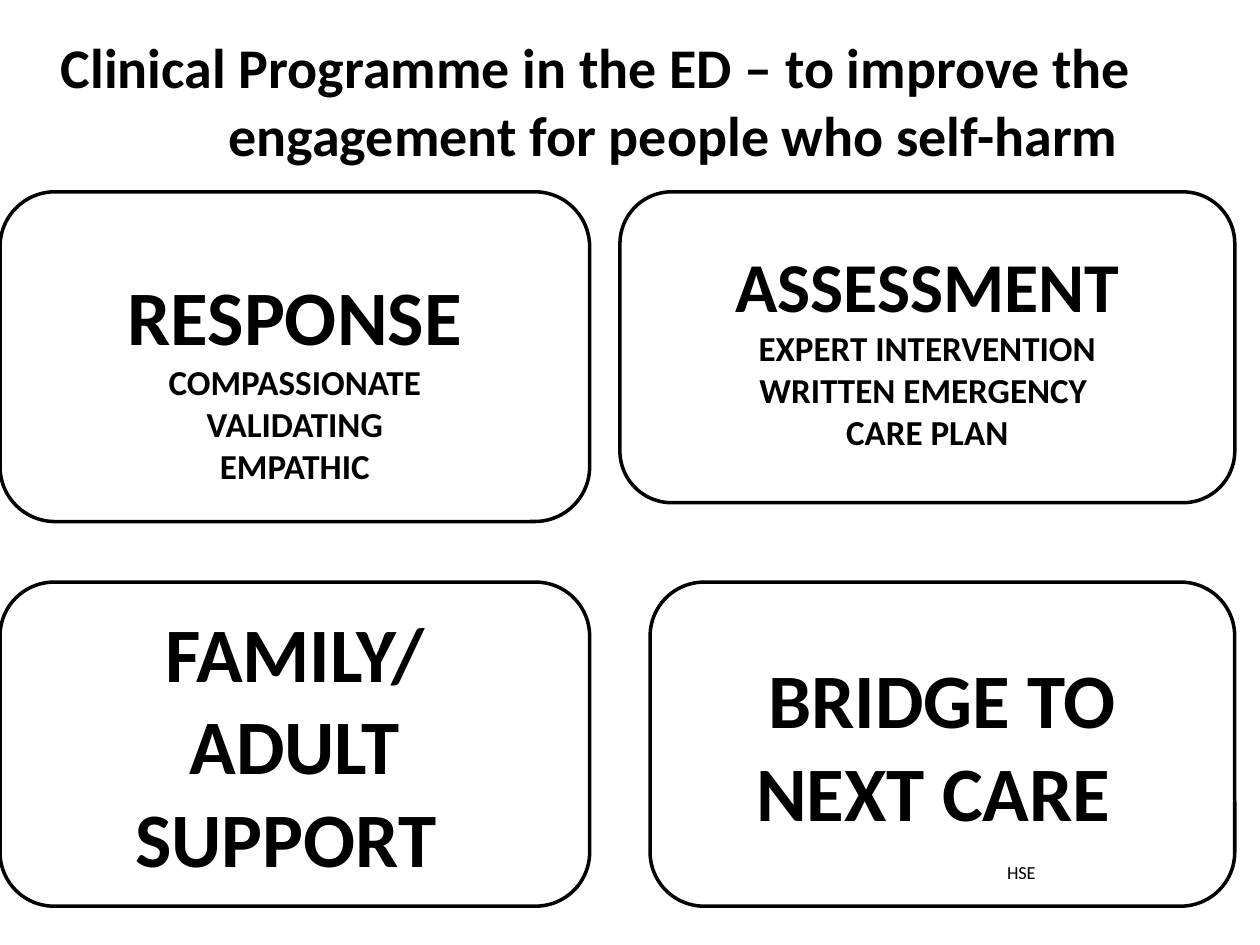
from dataclasses import dataclass

from pptx import Presentation
from pptx import util as u
from pptx.dml.color import RGBColor
from pptx.enum import shapes, text


@dataclass(frozen=True)
class Theme:
    font: str = "Calibri"
    ink: RGBColor = RGBColor(0, 0, 0)
    title: float = 32
    heading: float = 44
    small_heading: float = 40
    detail: float = 20
    footer: float = 10.5
    outline: float = 2


THEME = Theme()
WIDTH, HEIGHT = u.Inches(10), u.Inches(7.5)
LEFT, LEFT_END, RIGHT_END = 0, 0.468, 0.98
TOP, LOWER, BOTTOM = 0.203, 0.616, 0.959


def area(left, top, right, bottom):
    return (int(WIDTH * left), int(HEIGHT * top),
            int(WIDTH * (right - left)), int(HEIGHT * (bottom - top)))


def apply(target, formats):
    for name, value in formats.items():
        setattr(target, name, value)


def write(frame, lines, align, bold=True, **frame_formats):
    apply(frame, {"word_wrap": True, "auto_size": text.MSO_AUTO_SIZE.NONE,
                  "vertical_anchor": text.MSO_ANCHOR.MIDDLE, **frame_formats})
    for index, (words, size) in enumerate(lines):
        para = frame.add_paragraph() if index else frame.paragraphs[0]
        para.alignment = align
        span = para.add_run()
        span.text = words
        apply(span.font, {"name": THEME.font, "size": u.Pt(size), "bold": bold})
        span.font.color.rgb = THEME.ink


def add_title(page, words):
    title = page.shapes.title
    left, top, width, height = area(0.001, 0.059, 0.908, 0.153)
    apply(title, {"left": left, "top": top, "width": width, "height": height})
    write(title.text_frame, [(words, THEME.title)], text.PP_ALIGN.RIGHT)


def add_card(page, bounds, lines, **frame_formats):
    card = page.shapes.add_shape(shapes.MSO_SHAPE.ROUNDED_RECTANGLE, *area(*bounds))
    card.shadow.inherit = False
    card.fill.background()
    card.line.color.rgb = THEME.ink
    card.line.width = u.Pt(THEME.outline)
    write(card.text_frame, lines, text.PP_ALIGN.CENTER, **frame_formats)


def add_footer(page, words):
    box = page.shapes.add_textbox(*area(0.533, 0.919, 0.842, 0.941))
    write(box.text_frame, [(words, THEME.footer)], text.PP_ALIGN.RIGHT, bold=False,
          vertical_anchor=text.MSO_ANCHOR.BOTTOM, margin_right=u.Inches(0.2))


def headed(heading, size, details):
    return [(heading, size)] + [(words, THEME.detail) for words in details]


def main():
    deck = Presentation()
    apply(deck, {"slide_width": WIDTH, "slide_height": HEIGHT})
    page = deck.slides.add_slide(deck.slide_layouts[5])

    add_title(page, "Clinical Programme in the ED – to improve the "
                    "engagement for people who self-harm ")
    add_card(page, (LEFT, TOP, LEFT_END, 0.552),
             headed("RESPONSE", THEME.heading,
                    ["COMPASSIONATE", "VALIDATING", "EMPATHIC"]),
             margin_top=u.Inches(0.38))
    add_card(page, (0.492, TOP, RIGHT_END, 0.532),
             headed("ASSESSMENT", THEME.small_heading,
                    ["EXPERT INTERVENTION", "WRITTEN EMERGENCY ", "CARE PLAN"]))
    add_card(page, (LEFT, LOWER, LEFT_END, BOTTOM),
             [(words, THEME.heading) for words in ("FAMILY/", "ADULT", "SUPPORT ")])
    add_card(page, (0.516, LOWER, RIGHT_END, BOTTOM),
             [("BRIDGE TO NEXT CARE ", THEME.heading)],
             margin_left=u.Inches(0.3), margin_right=u.Inches(0.3))
    add_footer(page, "HSE")
    deck.save("out.pptx")


if __name__ == "__main__":
    main()
